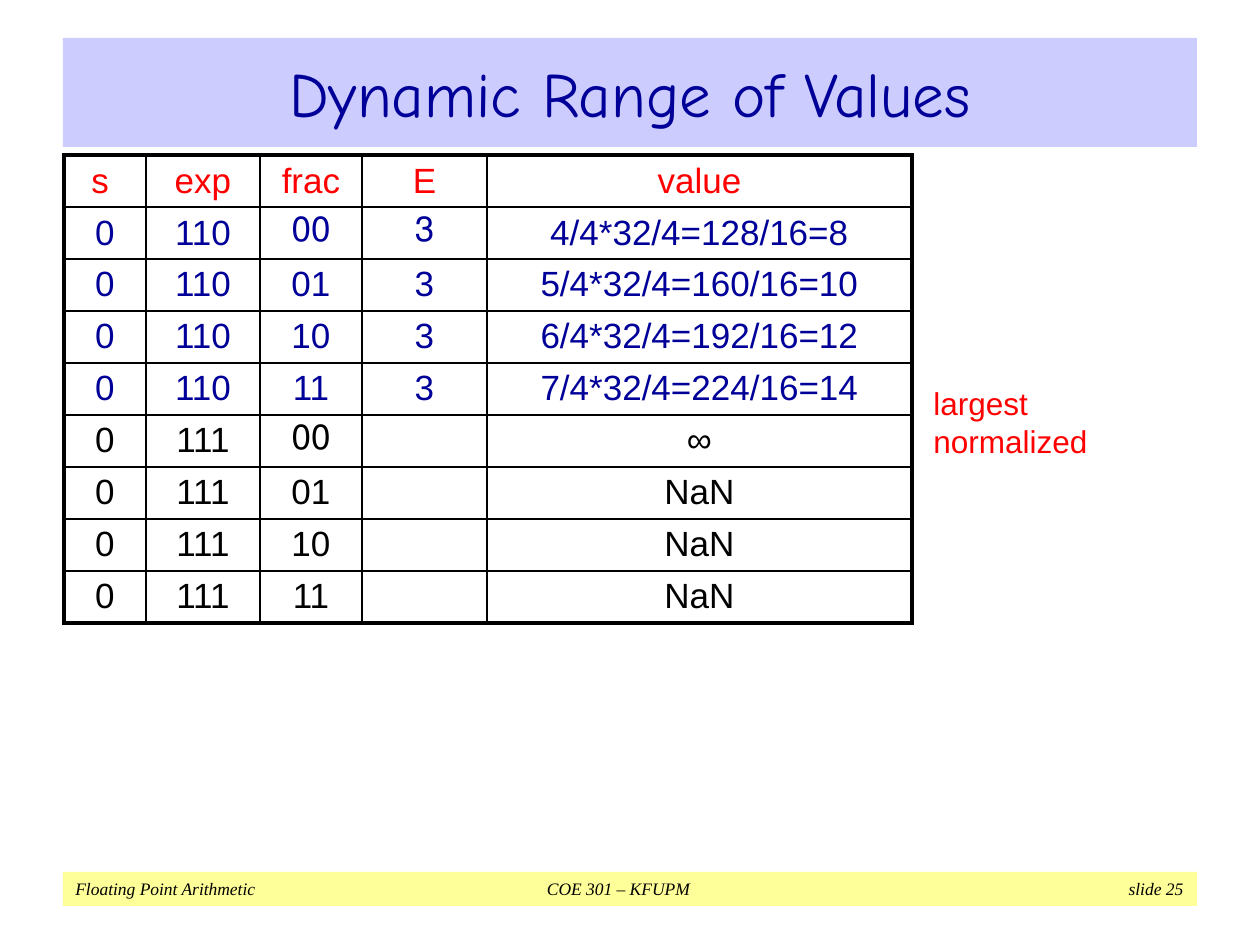
from lxml import etree
from pptx import Presentation
from pptx import util as u
from pptx.dml.color import RGBColor
from pptx.enum import shapes, text
from pptx.oxml import ns

SCALE = 914400 / 126  # EMU per px
COLORS = {"navy": "000099", "lavender": "CCCCFF", "yellow": "FFFF99",
          "red": "FF0000", "black": "000000"}
CENTER = text.PP_ALIGN.CENTER


def px(length):
    return u.Emu(round(length * SCALE))


class SlideBuilder:
    def __init__(self, slide):
        self.slide = slide

    def add_text(self, frame, words, color, align=None, **font):
        """Fill the first paragraph and return it."""
        paragraph = frame.paragraphs[0]
        paragraph.alignment = align
        run = paragraph.add_run()
        run.text = words
        for name, value in font.items():
            setattr(run.font, name, value)
        run.font.color.rgb = RGBColor.from_string(COLORS[color])
        return paragraph

    def band(self, box, fill, words, color, anchor, align=None, **font):
        shape = self.slide.shapes.add_shape(
            shapes.MSO_SHAPE.RECTANGLE, *map(px, box))
        shape.shadow.inherit = False
        shape.fill.solid()
        shape.fill.fore_color.rgb = RGBColor.from_string(COLORS[fill])
        shape.line.fill.background()
        shape.text_frame.vertical_anchor = anchor
        return self.add_text(shape.text_frame, words, color, align, **font)

    def tab_stops(self, paragraph, stops):
        properties = paragraph._p.get_or_add_pPr()
        tabs = etree.SubElement(properties, ns.qn("a:tabLst"))
        for position, align in stops:
            etree.SubElement(tabs, ns.qn("a:tab"),
                             pos=str(px(position)), algn=align)

    def label(self, box, words, color, **font):
        frame = self.slide.shapes.add_textbox(*map(px, box)).text_frame
        frame.word_wrap = False
        self.add_text(frame, words, color, text.PP_ALIGN.LEFT, **font)

    def borders(self, cell, widths):
        properties = cell._tc.get_or_add_tcPr()
        for index, (side, width) in enumerate(zip("LRTB", widths)):
            line = etree.Element(ns.qn(f"a:ln{side}"), w=str(u.Pt(width)))
            fill = etree.SubElement(line, ns.qn("a:solidFill"))
            etree.SubElement(fill, ns.qn("a:srgbClr"), val=COLORS["black"])
            properties.insert(index, line)

    def table(self, left, top, columns, row_height, rows, row_colors, rtl, **font):
        last_row, last_column = len(rows) - 1, len(columns) - 1
        table = self.slide.shapes.add_table(
            len(rows), len(columns), px(left), px(top),
            px(sum(columns)), px(row_height * len(rows))).table
        table.first_row = table.horz_banding = False
        for column, width in zip(table.columns, columns):
            column.width = px(width)
        for r, values in enumerate(rows):
            table.rows[r].height = px(row_height)
            for c, value in enumerate(values):
                cell = table.cell(r, c)
                cell.fill.background()
                cell.margin_bottom = px(4)
                outer = (c == 0, c == last_column, r == 0, r == last_row)
                self.borders(cell, [2.25 if edge else 1 for edge in outer])
                paragraph = self.add_text(cell.text_frame, value, row_colors[r],
                                          CENTER, **font)
                if (r, c) in rtl:
                    paragraph._p.get_or_add_pPr().set("rtl", "1")


def main():
    presentation = Presentation()
    presentation.slide_width, presentation.slide_height = px(1260), px(945)
    builder = SlideBuilder(
        presentation.slides.add_slide(presentation.slide_layouts[6]))

    # Footer band
    footer = builder.band(
        (63, 872, 1134, 34), "yellow",
        "Floating Point Arithmetic\tCOE 301 – KFUPM\t slide 25", "black",
        text.MSO_ANCHOR.TOP, text.PP_ALIGN.LEFT,
        name="Times New Roman", size=u.Pt(10), italic=True)
    builder.tab_stops(footer, [(543, "ctr"), (1108, "r")])

    # Title band
    builder.band((63, 38, 1134, 109), "lavender", "Dynamic Range of Values",
                 "navy", text.MSO_ANCHOR.MIDDLE, CENTER,
                 name="Comic Neue", size=u.Pt(36))

    # Table of encodings
    fractions = ["00", "01", "10", "11"]
    normalized = ["4/4*32/4=128/16=8", "5/4*32/4=160/16=10",
                  "6/4*32/4=192/16=12", "7/4*32/4=224/16=14"]
    special = ["∞", "NaN", "NaN", "NaN"]
    rows = [["s ", "exp", "frac", "E", "value"]]
    rows += [["0", "110", frac, "3", value]
             for frac, value in zip(fractions, normalized)]
    rows += [["0", "111", frac, "", value]
             for frac, value in zip(fractions, special)]
    builder.table(64, 155, [82, 114, 102, 125, 425], 52, rows,
                  ["red"] + ["navy"] * 4 + ["black"] * 4,
                  {(1, 2), (1, 3), (5, 2)}, name="Arial", size=u.Pt(20))

    # Note beside the last normalized row
    builder.label((921, 378, 282, 50), "largest normalized", "red",
                  name="Arial", size=u.Pt(18))

    presentation.save("out.pptx")


if __name__ == "__main__":
    main()
